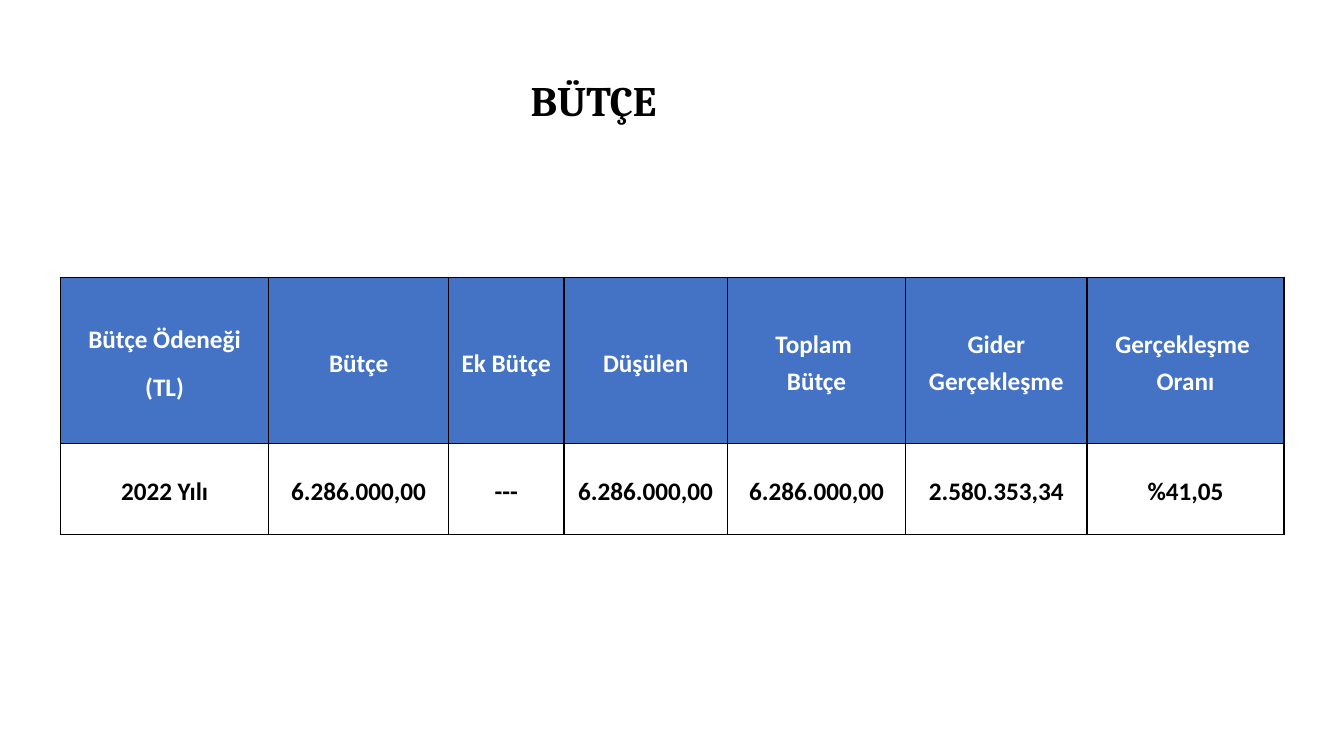
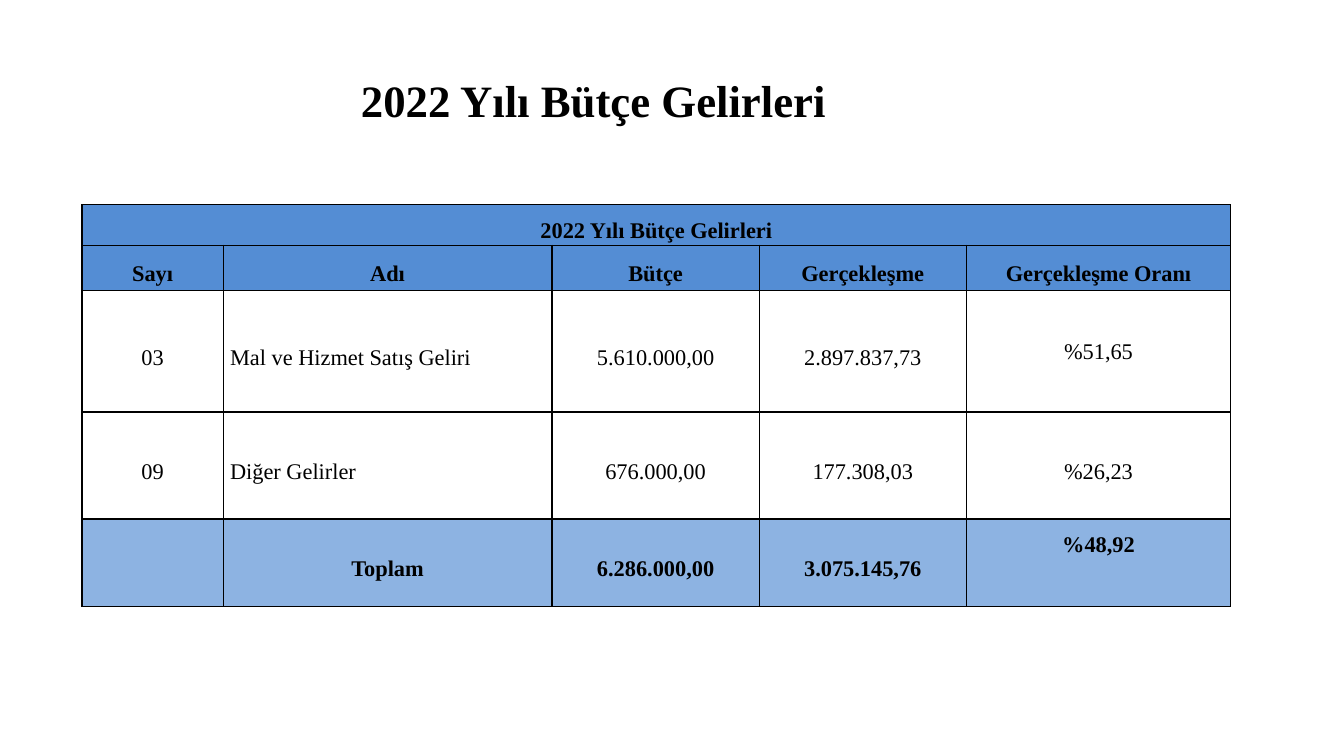
import pptx
import pptx.dml.color
import pptx.enum.text
import pptx.oxml
import pptx.oxml.ns
import pptx.util

Pt = pptx.util.Pt
RGB = pptx.dml.color.RGBColor
ALIGN = pptx.enum.text.PP_ALIGN
MIDDLE = pptx.enum.text.MSO_ANCHOR.MIDDLE

BLACK = RGB(0x00, 0x00, 0x00)
WHITE = RGB(0xFF, 0xFF, 0xFF)
ROYAL = RGB(0x44, 0x72, 0xC4)
BLUE = RGB(0x54, 0x8D, 0xD4)
PALE = RGB(0x8D, 0xB3, 0xE2)
SERIF = "Times New Roman"


class Deck:
    def __init__(self):
        self.file = pptx.Presentation()
        self.file.slide_width, self.file.slide_height = Pt(960), Pt(540)
        self.slide = None

    def page(self, title, font, size):
        """Start a slide with its title."""
        self.slide = self.file.slides.add_slide(self.file.slide_layouts[6])
        box = self.slide.shapes.add_textbox(Pt(10), Pt(46.8), Pt(828), Pt(53.3))
        frame = box.text_frame
        frame.word_wrap = True
        frame.vertical_anchor = MIDDLE
        frame.text = title
        self.style(frame, font, size, BLACK, True, 0.9, 0)

    def style(self, frame, font, size, color, bold, lead, after, align=ALIGN.CENTER):
        for para in frame.paragraphs:
            para.alignment = align
            para.line_spacing = lead
            para.space_after = Pt(after)
            para.font.name, para.font.size = font, Pt(size)
            para.font.color.rgb, para.font.bold = color, bold

    def table(self, left, top, cols, rows):
        shape = self.slide.shapes.add_table(
            len(rows), len(cols), Pt(left), Pt(top), Pt(sum(cols)), Pt(sum(rows)))
        grid = shape.table
        grid.first_row = grid.horz_banding = False
        for col, width in zip(grid.columns, cols):
            col.width = Pt(width)
        for row, height in zip(grid.rows, rows):
            row.height = Pt(height)
        return grid

    def cell(self, cell, text, fill, font, size, color, bold, lead,
             align=ALIGN.CENTER, lift=0):
        """Fill one cell; lift is extra room below its text."""
        cell.text = text
        cell.vertical_anchor = MIDDLE
        cell.margin_left = cell.margin_right = Pt(5)
        cell.margin_top, cell.margin_bottom = 0, Pt(lift)
        self.style(cell.text_frame, font, size, color, bold, lead, 8, align)
        self.border(cell)
        cell.fill.solid()
        cell.fill.fore_color.rgb = fill

    def border(self, cell):
        props = cell._tc.get_or_add_tcPr()
        for side in ("lnL", "lnR", "lnT", "lnB"):
            props.append(pptx.oxml.parse_xml(
                f'<a:{side} {pptx.oxml.ns.nsdecls("a")} w="{Pt(1)}"><a:solidFill>'
                f'<a:srgbClr val="{BLACK}"/></a:solidFill></a:{side}>'))


def budget(deck):
    deck.page("BÜTÇE", "Cambria", 30)
    data = [
        ["Bütçe Ödeneği\n(TL)", "Bütçe", "Ek Bütçe", "Düşülen", "Toplam \vBütçe",
         "Gider Gerçekleşme", "Gerçekleşme \vOranı"],
        ["2022 Yılı", "6.286.000,00", "---", "6.286.000,00", "6.286.000,00",
         "2.580.353,34", "%41,05"],
    ]
    grid = deck.table(43.2, 198, [148.8, 128.4, 82.5, 116.7, 127.5, 129.4, 140.8],
                      [118.8, 64.8])
    looks = [(ROYAL, WHITE), (WHITE, BLACK)]
    for r, (texts, (fill, color)) in enumerate(zip(data, looks)):
        for c, text in enumerate(texts):
            deck.cell(grid.cell(r, c), text, fill, "Calibri", 18, color, True, 1.2)


def income(deck):
    title = "2022 Yılı Bütçe Gelirleri"
    deck.page(title, SERIF, 32)
    data = [
        [title, "", "", "", ""],
        ["Sayı", "Adı", "Bütçe", "Gerçekleşme", "Gerçekleşme Oranı"],
        ["03", "Mal ve Hizmet Satış Geliri", "5.610.000,00", "2.897.837,73", "%51,65"],
        ["09", "Diğer Gelirler", "676.000,00", "177.308,03", "%26,23"],
        ["", "Toplam", "6.286.000,00", "3.075.145,76", "%48,92"],
    ]
    grid = deck.table(58.6, 146.3, [100.8, 234.9, 148, 148, 188.8],
                      [26.4, 32.4, 86.8, 76.4, 61.4])
    grid.cell(0, 0).merge(grid.cell(0, 4))
    fills = [BLUE, BLUE, WHITE, WHITE, PALE]
    lifts = {(2, 4): 8.5, (4, 4): 34}
    for r, (texts, fill) in enumerate(zip(data, fills)):
        plain = fill == WHITE
        for c, text in enumerate(texts):
            align = ALIGN.LEFT if plain and c == 1 else ALIGN.CENTER
            deck.cell(grid.cell(r, c), text, fill, SERIF, 16, BLACK, not plain, 1.5,
                      align, lifts.get((r, c), 0))


def main():
    deck = Deck()
    budget(deck)
    income(deck)
    deck.file.save("out.pptx")


if __name__ == "__main__":
    main()
